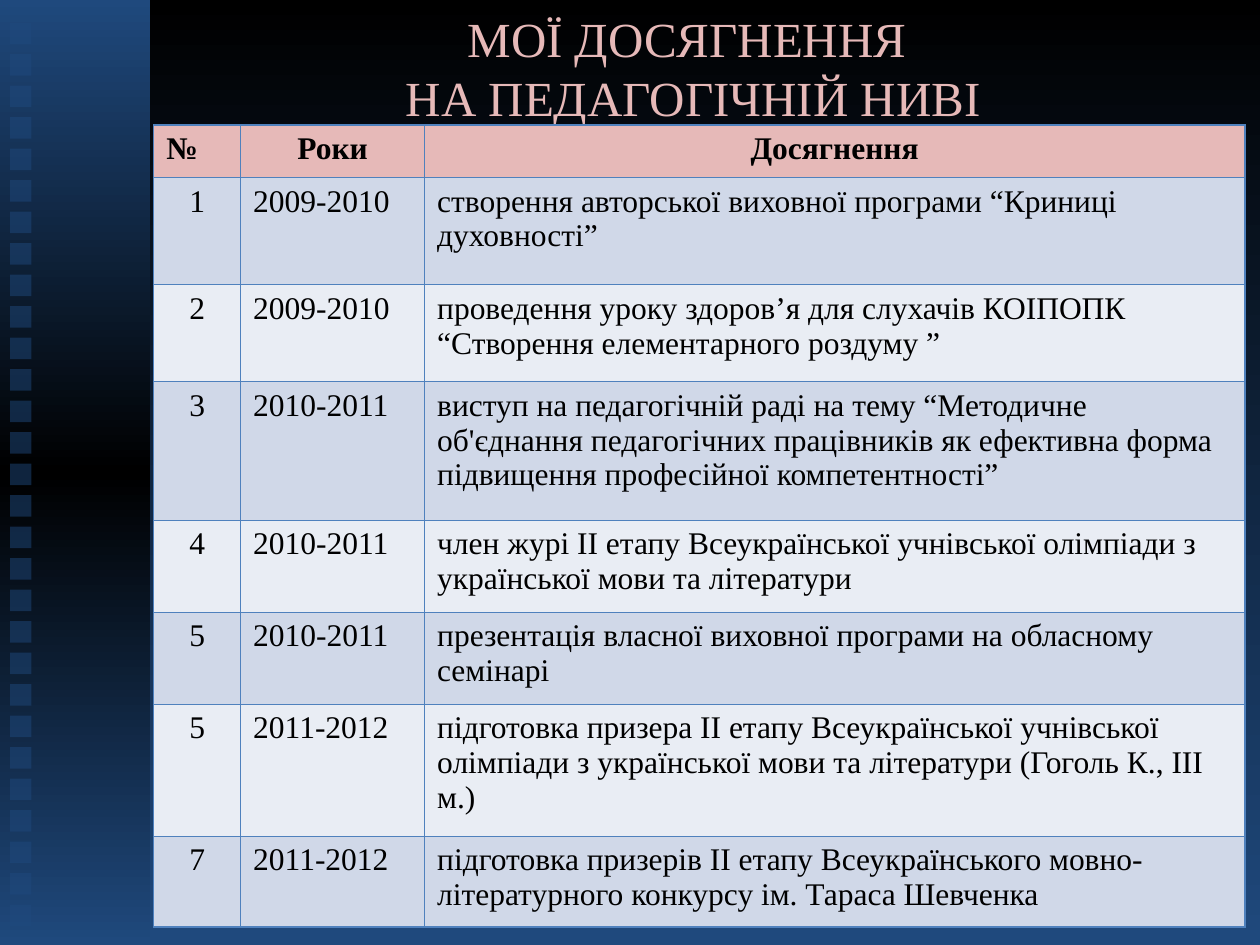
import copy
from dataclasses import dataclass
from pptx import Presentation
from pptx import util as u
from pptx.dml import color
from pptx.enum import shapes, text
from pptx.oxml import ns, xmlchemy

IN = u.Inches
LEFT, MID = text.PP_ALIGN.LEFT, text.PP_ALIGN.CENTER


@dataclass(frozen=True)
class Theme:
    font: str = "Times New Roman"
    dark: str = "000000"
    blue: str = "1F497D"
    pink: str = "E6B9B8"
    edge: str = "4F81BD"
    bands: tuple = ("D0D8E8", "E9EDF4")
    title: int = 28
    body: int = 18


def rgb(code):
    return color.RGBColor.from_string(code)


def write(frame, words, font, size, tone, align=LEFT, bold=False):
    frame.text = words
    for para in frame.paragraphs:
        para.alignment = align
        for run in para.runs:
            face = run.font
            face.name, face.size, face.bold = font, u.Pt(size), bold
            face.color.rgb = rgb(tone)


def blend(fill, tones):
    fill.gradient()
    fill.gradient_angle = 270
    first = fill.gradient_stops[0]._gs
    for _ in tones[2:]:
        first.addnext(copy.deepcopy(first))
    for i, (stop, tone) in enumerate(zip(fill.gradient_stops, tones)):
        stop.position = i / (len(tones) - 1)
        stop.color.rgb = rgb(tone)


def child(node, tag, **attrs):
    part = xmlchemy.OxmlElement(tag)
    for key, value in attrs.items():
        part.set(key, str(value))
    node.append(part)
    return part


class Page:
    def __init__(self, deck, theme):
        self.theme = theme
        self.slide = deck.slides.add_slide(deck.slide_layouts[5])

    def ground(self, tones):
        blend(self.slide.background.fill, tones)

    def rect(self, x, y, w, h, tones, alpha=None):
        box = self.slide.shapes.add_shape(
            shapes.MSO_SHAPE.RECTANGLE, IN(x), IN(y), IN(w), IN(h))
        box.shadow.inherit = False
        box.line.fill.background()
        if len(tones) > 1:
            blend(box.fill, tones)
        else:
            box.fill.solid()
            box.fill.fore_color.rgb = rgb(tones[0])
        if alpha:
            tint = box.fill._xPr.find(".//" + ns.qn("a:srgbClr"))
            child(tint, "a:alpha", val=alpha * 1000)

    def title(self, words, x, y, w, h):
        head = self.slide.shapes.title
        head.left, head.top, head.width, head.height = map(IN, (x, y, w, h))
        head.text_frame.vertical_anchor = text.MSO_ANCHOR.MIDDLE
        write(head.text_frame, words, self.theme.font, self.theme.title,
              self.theme.pink, MID)

    def cell(self, cell, words, tone, align, bold):
        props = cell._tc.get_or_add_tcPr()
        for side in "LRTB":
            line = child(props, "a:ln" + side, w=u.Pt(1))
            child(child(line, "a:solidFill"), "a:srgbClr", val=self.theme.edge)
        cell.fill.solid()
        cell.fill.fore_color.rgb = rgb(tone)
        write(cell.text_frame, words, self.theme.font, self.theme.body,
              self.theme.dark, align, bold)

    def table(self, rows, x, y, wides, highs):
        grid = self.slide.shapes.add_table(
            len(rows), len(wides), IN(x), IN(y),
            IN(sum(wides)), IN(sum(highs))).table
        for col, wide in zip(grid.columns, wides):
            col.width = IN(wide)
        for r, (row, high) in enumerate(zip(rows, highs)):
            grid.rows[r].height = IN(high)
            tone = self.theme.bands[(r - 1) % 2] if r else self.theme.pink
            for c, words in enumerate(row):
                align = MID if (r == 0) != (c == 0) else LEFT
                self.cell(grid.cell(r, c), words, tone, align, r == 0)


ROWS = [
    ("№", "Роки", "Досягнення"),
    ("1", "2009-2010", "створення авторської виховної програми “Криниці духовності”"),
    ("2", "2009-2010", "проведення уроку здоров’я для слухачів КОІПОПК "
     "“Створення елементарного роздуму ”"),
    ("3", "2010-2011", "виступ на педагогічній раді на тему “Методичне об'єднання "
     "педагогічних працівників як ефективна форма підвищення професійної компетентності”"),
    ("4", "2010-2011", "член журі ІІ етапу Всеукраїнської учнівської олімпіади "
     "з української мови та літератури"),
    ("5", "2010-2011", "презентація власної виховної програми на обласному семінарі"),
    ("5", "2011-2012", "підготовка призера ІІ етапу Всеукраїнської учнівської олімпіади "
     "з української мови та літератури (Гоголь К., ІІІ м.)"),
    ("7", "2011-2012", "підготовка призерів ІІ етапу Всеукраїнського "
     "мовно-літературного конкурсу ім. Тараса Шевченка"),
]


def main():
    deck = Presentation()
    deck.slide_width, deck.slide_height = IN(10), IN(7.5)
    theme = Theme()
    page = Page(deck, theme)
    page.ground((theme.dark, theme.blue))
    page.rect(0, 0, 1.19, 7.5, (theme.blue, theme.dark, theme.blue))
    for i in range(29):
        page.rect(0.08, 0.18 + 0.25 * i, 0.17, 0.17, (theme.blue,), alpha=50)
    page.title("МОЇ ДОСЯГНЕННЯ \vНА ПЕДАГОГІЧНІЙ НИВІ", 1.25, 0, 8.5, 1.07)
    page.table(ROWS, 1.22, 0.99, (0.69, 1.46, 6.51),
               (0.42, 0.85, 0.77, 1.1, 0.73, 0.73, 1.05, 0.72))
    deck.save("out.pptx")


if __name__ == "__main__":
    main()
